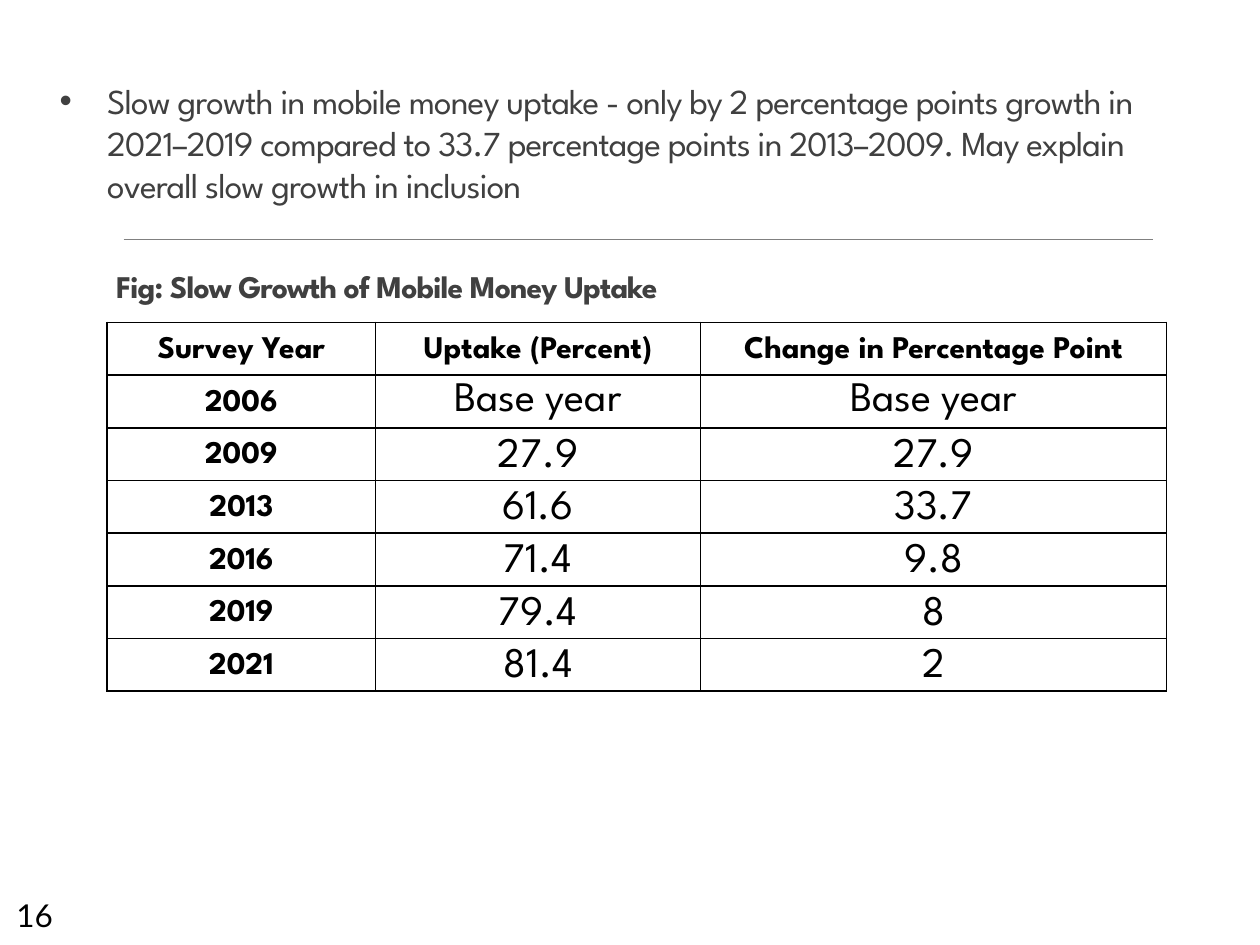
from dataclasses import dataclass

import pptx
import pptx.dml.color
import pptx.enum.shapes
import pptx.enum.text
import pptx.oxml
import pptx.oxml.ns
import pptx.util
from lxml import etree

Cm = pptx.util.Cm
Pt = pptx.util.Pt
RGB = pptx.dml.color.RGBColor
qn = pptx.oxml.ns.qn
ALIGN = pptx.enum.text.PP_ALIGN
ANCHOR = pptx.enum.text.MSO_ANCHOR


@dataclass(frozen=True)
class Theme:
    font: str = "League Spartan"
    number_font: str = "Lato"
    ink: RGB = RGB(0, 0, 0)
    grey: RGB = RGB(0x40, 0x40, 0x40)
    rule: RGB = RGB(0x80, 0x80, 0x80)
    paper: RGB = RGB(0xFF, 0xFF, 0xFF)
    small: int = 18
    body: int = 20
    value: int = 24
    tracking: int = -50


@dataclass(frozen=True)
class Box:
    left: float
    top: float
    width: float
    height: float

    def lengths(self) -> tuple:
        return Cm(self.left), Cm(self.top), Cm(self.width), Cm(self.height)


@dataclass(frozen=True)
class SurveyRow:
    year: str
    uptake: str
    change: str
    header: bool = False
    spacing: float = 1.15


THEME = Theme()
TITLE = Box(2.16, 5.26, 18.95, 0.99)
BODY = Box(1.02, 1.5, 23.09, 3.76)
TABLE = Box(2.16, 6.5, 21.36, 7.44)
PAGE_NUMBER = Box(0.08, 17.93, 1.63, 1.12)
COLUMNS = (5.41, 6.55, 9.4)
ROWS = (
    SurveyRow("Survey Year", "Uptake (Percent)", "Change in Percentage Point", header=True),
    SurveyRow("2006", "Base year", "Base year", spacing=1.0),
    SurveyRow("2009", "27.9", "27.9"),
    SurveyRow("2013", "61.6", "33.7"),
    SurveyRow("2016", "71.4", "9.8"),
    SurveyRow("2019", "79.4", "8"),
    SurveyRow("2021", "81.4", "2"),
)


def format_run(p, size: int, color: RGB, bold: bool = False,
               font: str = THEME.font, tracking: int = 0) -> None:
    r = p.runs[0]
    r.font.name = font
    r.font.size = Pt(size)
    r.font.bold = bold
    r.font.color.rgb = color
    if tracking:
        r.font._element.set("spc", str(tracking))


def fill_placeholder(sp, box: Box, text: str, anchor, size: int, bold: bool = False):
    sp.left, sp.top, sp.width, sp.height = box.lengths()
    tf = sp.text_frame
    tf.text = text
    tf.word_wrap = True
    tf.auto_size = pptx.enum.text.MSO_AUTO_SIZE.NONE
    tf.vertical_anchor = anchor
    tf.margin_left = tf.margin_right = Cm(0.18)
    tf.margin_top = tf.margin_bottom = Cm(0.1)
    p = tf.paragraphs[0]
    p.alignment = ALIGN.LEFT
    p.space_before = Pt(0)
    format_run(p, size, THEME.grey, bold, tracking=THEME.tracking)
    return p


def add_bullet(p, indent: float) -> None:
    pPr = p._p.get_or_add_pPr()
    pPr.set("marL", str(Cm(indent)))
    pPr.set("indent", str(-Cm(indent)))
    etree.SubElement(pPr, qn("a:buFont")).set("typeface", "Arial")
    etree.SubElement(pPr, qn("a:buChar")).set("char", "•")


def add_rule(s, left: float, right: float, y: float) -> None:
    line = s.shapes.add_connector(
        pptx.enum.shapes.MSO_CONNECTOR.STRAIGHT, Cm(left), Cm(y), Cm(right), Cm(y))
    line.line.color.rgb = THEME.rule
    line.line.width = Pt(0.5)
    etree.SubElement(line._element.spPr, qn("a:effectLst"))


def add_borders(cell) -> None:
    tcPr = cell._tc.get_or_add_tcPr()
    for side in ("L", "R", "T", "B"):
        ln = etree.SubElement(tcPr, qn(f"a:ln{side}"), w=str(Pt(1)))
        fill = etree.SubElement(ln, qn("a:solidFill"))
        etree.SubElement(fill, qn("a:srgbClr"), val=str(THEME.ink))


def fill_cell(cell, text: str, strong: bool, spacing: float) -> None:
    add_borders(cell)
    cell.fill.solid()
    cell.fill.fore_color.rgb = THEME.paper
    cell.vertical_anchor = ANCHOR.MIDDLE
    cell.margin_left = cell.margin_right = Cm(0.18)
    cell.margin_top = cell.margin_bottom = 0
    cell.text_frame.text = text
    p = cell.text_frame.paragraphs[0]
    p.alignment = ALIGN.CENTER
    p.line_spacing = spacing
    format_run(p, THEME.small if strong else THEME.value, THEME.ink, strong)


def add_uptake_table(s) -> None:
    table = s.shapes.add_table(len(ROWS), len(COLUMNS), *TABLE.lengths()).table
    table.first_row = table.horz_banding = False
    for column, width in zip(table.columns, COLUMNS):
        column.width = Cm(width)
    for i, row in enumerate(ROWS):
        table.rows[i].height = Cm(TABLE.height / len(ROWS))
        for j, text in enumerate((row.year, row.uptake, row.change)):
            strong = row.header or j == 0
            fill_cell(table.cell(i, j), text, strong, 1.15 if strong else row.spacing)


def add_page_number(s, number: str) -> None:
    tf = s.shapes.add_textbox(*PAGE_NUMBER.lengths()).text_frame
    tf.word_wrap = True
    tf.text = number
    format_run(tf.paragraphs[0], THEME.small, THEME.ink, font=THEME.number_font)


def main() -> None:
    prs = pptx.Presentation()
    prs.slide_width, prs.slide_height = Cm(25.4), Cm(19.05)
    s = prs.slides.add_slide(prs.slide_layouts[1])
    add_rule(s, 2.49, 23.24, 4.83)
    fill_placeholder(s.shapes.title, TITLE, "Fig: Slow Growth of Mobile Money Uptake",
                     ANCHOR.MIDDLE, THEME.small, bold=True)
    p = fill_placeholder(
        s.placeholders[1], BODY,
        "Slow growth in mobile money uptake - only by 2 percentage points growth in "
        "2021–2019 compared to 33.7 percentage points in 2013–2009. "
        "May explain overall slow growth in inclusion",
        ANCHOR.TOP, THEME.body)
    add_bullet(p, 0.96)
    add_uptake_table(s)
    add_page_number(s, "16")
    prs.save("out.pptx")


if __name__ == "__main__":
    main()
